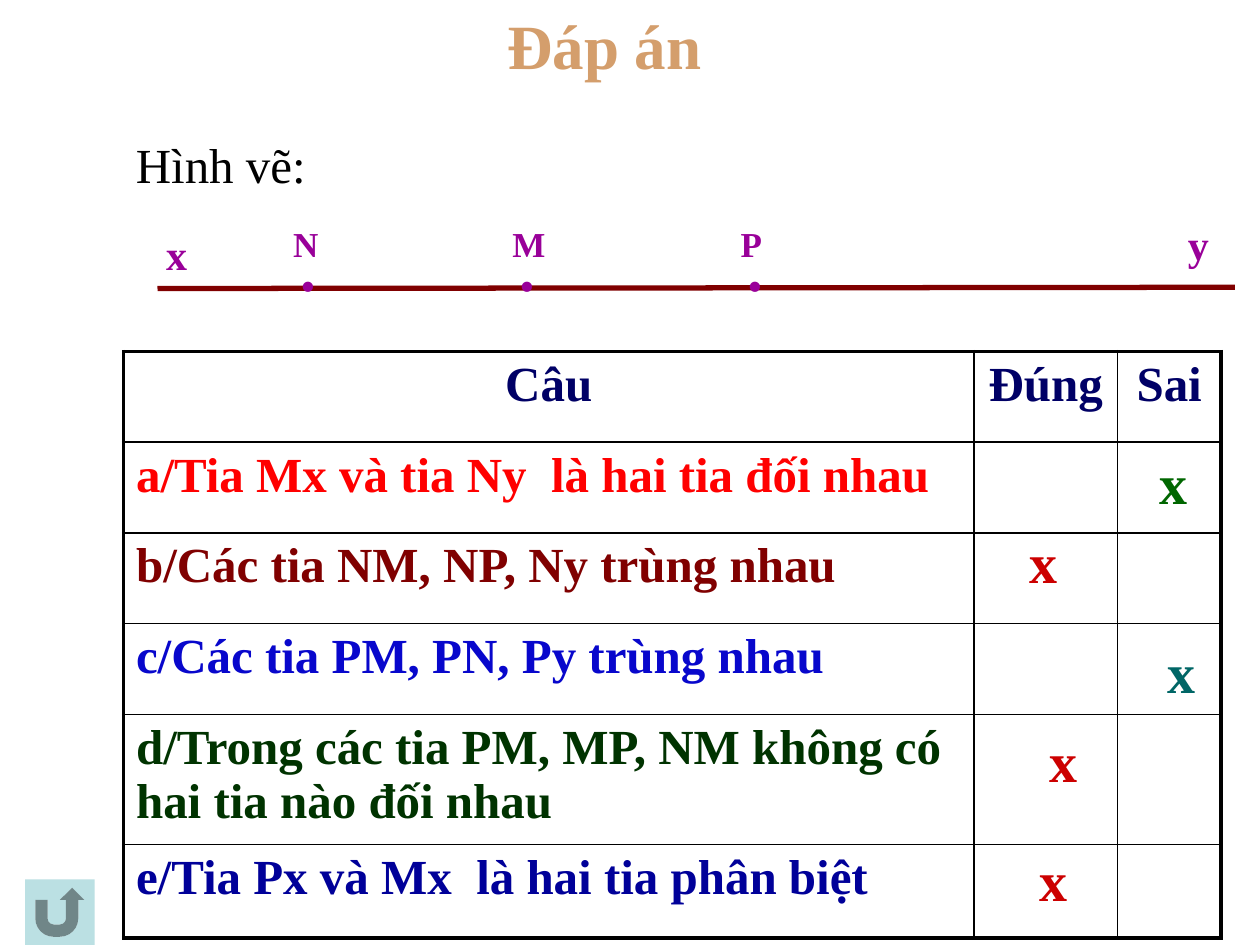
from dataclasses import dataclass

from lxml import etree
from pptx import Presentation
from pptx.dml.color import RGBColor
from pptx.enum.shapes import MSO_CONNECTOR as Connector, MSO_SHAPE as Preset
from pptx.enum.text import MSO_ANCHOR as Anchor, MSO_AUTO_SIZE as AutoSize, PP_ALIGN as Align
from pptx.oxml.ns import qn
from pptx.util import Inches, Pt


@dataclass(frozen=True)
class Theme:
    font: str = "Times New Roman"
    title: str = "D49E6C"
    ink: str = "000000"
    header: str = "000066"
    ray: str = "800000"
    label: str = "990099"
    right: str = "CC0000"
    button: str = "BBE0E3"
    title_size: int = 36
    body_size: int = 28
    mark_size: int = 32
    end_size: int = 24
    point_size: int = 20
    dot_size: int = 36
    thin: float = 1
    thick: float = 2.25


def write(para, text, size, color, font, bold=True, align=None, spacing=None):
    """Add one formatted span to a paragraph."""
    span = para.add_run()
    span.text = text
    span.font.name, span.font.size, span.font.bold = font, Pt(size), bold
    span.font.color.rgb = RGBColor.from_string(color)
    if align is not None:
        para.alignment = align
    if spacing is not None:
        para.line_spacing = spacing


class SlideBuilder:
    def __init__(self, slide, theme):
        self.slide, self.theme = slide, theme

    def title(self, text, left, top, width, height):
        box = self.slide.shapes.title
        box.left, box.top, box.width, box.height = map(Inches, (left, top, width, height))
        frame = box.text_frame
        frame.auto_size, frame.vertical_anchor = AutoSize.NONE, Anchor.TOP
        write(frame.paragraphs[0], text, self.theme.title_size, self.theme.title,
              self.theme.font, align=Align.CENTER)

    def text(self, lines, left, top, width, height, color, wrap=False, **style):
        """Each line is a (text, size) pair and becomes a paragraph."""
        box = self.slide.shapes.add_textbox(*map(Inches, (left, top, width, height)))
        frame = box.text_frame
        frame.word_wrap, frame.auto_size = wrap, AutoSize.SHAPE_TO_FIT_TEXT
        for index, (text, size) in enumerate(lines):
            para = frame.add_paragraph() if index else frame.paragraphs[0]
            write(para, text, size, color, self.theme.font, **style)

    def line(self, start, end, color, width):
        line = self.slide.shapes.add_connector(Connector.STRAIGHT, *map(Inches, start + end))
        line.line.color.rgb = RGBColor.from_string(color)
        line.line.width = Pt(width)
        etree.SubElement(line._element.spPr, qn("a:effectLst"))

    def shape(self, preset, left, top, width, height, color):
        shape = self.slide.shapes.add_shape(preset, *map(Inches, (left, top, width, height)))
        shape.shadow.inherit = False
        shape.fill.solid()
        shape.fill.fore_color.rgb = RGBColor.from_string(color)
        shape.line.fill.background()

    def borders(self, cell, widths):
        """Widths run left, right, top, bottom."""
        props = cell._tc.get_or_add_tcPr()
        for index, (side, width) in enumerate(zip("LRTB", widths)):
            edge = etree.Element(qn(f"a:ln{side}"), w=str(Pt(width)))
            fill = etree.SubElement(edge, qn("a:solidFill"))
            etree.SubElement(fill, qn("a:srgbClr"), val=self.theme.ink)
            props.insert(index, edge)

    def table(self, rows, left, top, widths, heights):
        """Rows hold (text, color) cells; the first row is centred."""
        frame = self.slide.shapes.add_table(
            len(heights), len(widths),
            *map(Inches, (left, top, sum(widths), sum(heights))))
        table = frame.table
        table.first_row = table.horz_banding = False
        for column, width in zip(table.columns, widths):
            column.width = Inches(width)
        for row, height in zip(table.rows, heights):
            row.height = Inches(height)
        last_row, last_column = len(heights) - 1, len(widths) - 1
        for r, row in enumerate(rows):
            for c, (text, color) in enumerate(row):
                cell = table.cell(r, c)
                cell.fill.background()
                outer = (c == 0, c == last_column, r == 0, r == last_row)
                self.borders(cell, [self.theme.thick if edge else self.theme.thin
                                    for edge in outer])
                para = cell.text_frame.paragraphs[0]
                if text:
                    write(para, text, self.theme.body_size, color, self.theme.font,
                          align=Align.LEFT if r else Align.CENTER)
                else:
                    para.font.size = Pt(self.theme.body_size)


STATEMENTS = [
    ("a/Tia Mx và tia Ny  là hai tia đối nhau", "FF0000"),
    ("b/Các tia NM, NP, Ny trùng nhau", "800000"),
    ("c/Các tia PM, PN, Py trùng nhau", "0807CC"),
    ("d/Trong các tia PM, MP, NM không có hai tia nào đối nhau", "003300"),
    ("e/Tia Px và Mx  là hai tia phân biệt", "000099"),
]


def main():
    theme = Theme()
    deck = Presentation()
    deck.slide_width, deck.slide_height = Inches(10), Inches(7.5)
    page = SlideBuilder(deck.slides.add_slide(deck.slide_layouts[5]), theme)

    # Heading
    page.title("Đáp án", 2.67, 0, 4.25, 0.58)
    page.text([("Hình vẽ:", theme.body_size)], 0.98, 1.02, 1.89, 0.57,
              theme.ink, wrap=True, bold=False)

    # Answer table
    header = [(name, theme.header) for name in ("Câu", "Đúng", "Sai")]
    blank = ("", theme.ink)
    page.table([header] + [[statement, blank, blank] for statement in STATEMENTS],
               0.98, 2.79, [6.75, 1.14, 0.82], [0.72] * 4 + [1.03, 0.74])

    # Answer marks
    for left, top, color in [(9.1, 3.51, "006600"), (8.07, 4.14, theme.right),
                             (9.17, 5.01, "006666"), (8.23, 5.72, theme.right),
                             (8.15, 6.66, theme.right)]:
        page.text([("x", theme.mark_size)], left, top, 0.42, 0.63, color)

    # Line xy with its ends and points
    page.line((1.25, 2.29), (9.8, 2.28), theme.ray, 3)
    for name, left, top in [("x", 1.22, 1.94), ("y", 9.33, 1.86)]:
        page.text([(name, theme.end_size)], left, top, 0.37, 0.3, theme.label, spacing=0.5)
    for name, left, width in [("N", 2.16, 0.63), ("M", 3.9, 0.87), ("P", 5.71, 0.79)]:
        page.text([(f" {name}", theme.point_size), (" .", theme.dot_size)],
                  left, 1.86, width, 0.57, theme.label, wrap=True, spacing=0.5)

    # Return button
    page.shape(Preset.ACTION_BUTTON_RETURN, 0.2, 6.98, 0.55, 0.52, theme.button)

    deck.save("out.pptx")


if __name__ == "__main__":
    main()
